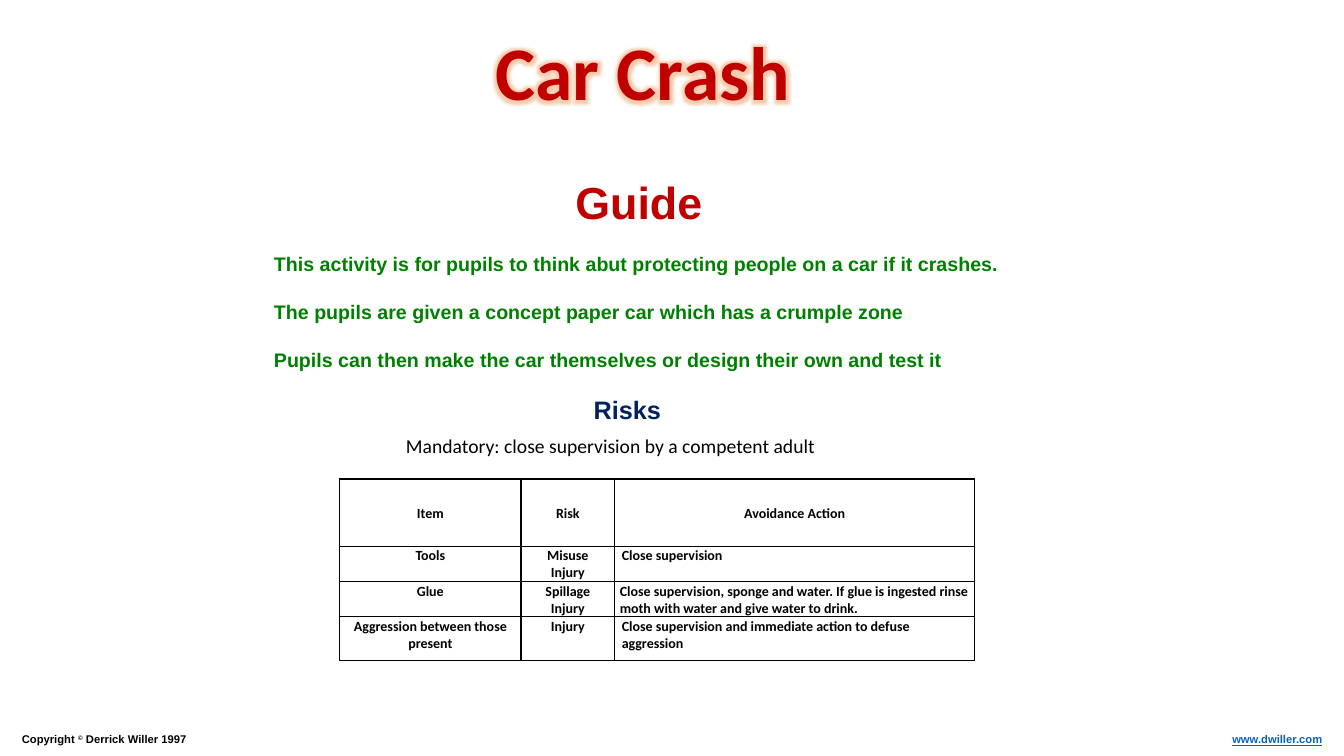
import pptx
import pptx.util
import pptx.dml.color
import pptx.enum.text
import pptx.oxml
import lxml.etree

Cm, Pt = pptx.util.Cm, pptx.util.Pt
Rgb = pptx.dml.color.RGBColor.from_string
Align, Anchor = pptx.enum.text.PP_ALIGN, pptx.enum.text.MSO_ANCHOR
Size = pptx.enum.text.MSO_AUTO_SIZE
NS = "http://schemas.openxmlformats.org/drawingml/2006/main"

THEME = {
    "title": ("C00000", {"size": Pt(54), "name": "Calibri", "bold": True}),
    "guide": ("C00000", {"size": Pt(32), "name": "Arial", "bold": True}),
    "body": ("008000", {"size": Pt(14), "name": "Arial", "bold": True}),
    "risks": ("002060", {"size": Pt(18), "name": "Arial", "bold": True}),
    "rule": ("000000", {"size": Pt(14), "name": "Calibri", "bold": False}),
    "cell": ("000000", {"size": Pt(10), "name": "Calibri", "bold": True}),
    "foot": ("000000", {"size": Pt(8), "name": "Arial", "bold": True}),
    "link": ("0563C1", {"size": Pt(8), "name": "Arial", "bold": True, "underline": True}),
    "edge": "002060",
    "glow": "ED7D31",
    "grid": "000000",
}


def fill(frame, text, style, align=Align.LEFT):
    """Put text in a frame, one paragraph a line, in a theme style."""
    frame.text = text
    color, font = THEME[style]
    for para in frame.paragraphs:
        para.alignment = align
        for run in para.runs:
            for key, value in font.items():
                setattr(run.font, key, value)
            run.font.color.rgb = Rgb(color)


def place(shape, box, wrap):
    for key, value in zip(("left", "top", "width", "height"), box):
        setattr(shape, key, Cm(value))
    frame = shape.text_frame
    form = {"word_wrap": wrap, "auto_size": Size.NONE, "vertical_anchor": Anchor.TOP}
    for key, value in form.items():
        setattr(frame, key, value)
    return frame


deck = pptx.Presentation()
deck.slide_width, deck.slide_height = Cm(33.87), Cm(19.05)
slide = deck.slides.add_slide(deck.slide_layouts[1])
title, body = slide.placeholders

# Title with outline and glow
frame = place(title, (12.19, 0.51, 8.03, 2.57), False)
fill(frame, "Car Crash", "title", Align.CENTER)
props = frame.paragraphs[0].runs[0].font._element
props.insert(0, pptx.oxml.parse_xml(
    f'<a:ln xmlns:a="{NS}" w="9525"><a:solidFill><a:srgbClr val="{THEME["edge"]}"/>'
    '</a:solidFill></a:ln>'))
props.insert(2, pptx.oxml.parse_xml(
    f'<a:effectLst xmlns:a="{NS}"><a:glow rad="101600"><a:srgbClr val="{THEME["glow"]}">'
    '<a:alpha val="40000"/></a:srgbClr></a:glow></a:effectLst>'))

# Guide text
frame = place(body, (6.65, 6.22, 22.63, 3.25), True)
fill(frame, "This activity is for pupils to think abut protecting people on a car if it crashes.\n"
     "The pupils are given a concept paper car which has a crumple zone\n"
     "Pupils can then make the car themselves or design their own and test it", "body")
for para in frame.paragraphs:
    para.space_before, para.space_after = Pt(0), Pt(17.5)
    props = para._p.get_or_add_pPr()
    props.set("marL", "0")
    props.set("indent", "0")
    lxml.etree.SubElement(props, f"{{{NS}}}buNone")

# Headings and footer
notes = [
    ("Guide", "guide", (14.25, 4.29, 3.73, 1.63), False, Align.LEFT),
    ("Risks", "risks", (14.71, 9.8, 2.24, 1.02), False, Align.LEFT),
    ("Mandatory: close supervision by a competent adult", "rule",
     (9.98, 10.82, 11.71, 0.86), True, Align.LEFT),
    ("Copyright ", "foot", (0.3, 18.34, 14.35, 0.61), True, Align.LEFT),
    ("www.dwiller.com", "link", (30.18, 18.34, 3.4, 0.61), True, Align.RIGHT),
]
for text, style, box, wrap, align in notes:
    shape = slide.shapes.add_textbox(0, 0, 0, 0)
    frame = place(shape, box, wrap)
    fill(frame, text, style, align)
    if style == "foot":
        color, font = THEME[style]
        for part, lift in (("©", "30000"), (" Derrick Willer 1997", "0")):
            run = frame.paragraphs[0].add_run()
            run.text = part
            for key, value in font.items():
                setattr(run.font, key, value)
            run.font.color.rgb = Rgb(color)
            run.font._element.set("baseline", lift)

# Risk table
rows = [
    ("Item", "Risk", "Avoidance Action"),
    ("Tools", "Misuse\nInjury", "Close supervision"),
    ("Glue", "Spillage\nInjury", "Close supervision, sponge and water. "
     "If glue is ingested rinse moth with water and give water to drink."),
    ("Aggression between those present", "Injury",
     "Close supervision and immediate action to defuse aggression"),
]
widths, heights = (4.57, 2.36, 9.07), (1.7, 0.87, 0.87, 1.1)
table = slide.shapes.add_table(4, 3, Cm(8.56), Cm(12.07), Cm(sum(widths)), Cm(sum(heights))).table
for col, width in zip(table.columns, widths):
    col.width = Cm(width)
for i, (row, height) in enumerate(zip(rows, heights)):
    table.rows[i].height = Cm(height)
    side = Cm(0.13 if i == 2 else 0.18)
    for j, text in enumerate(row):
        cell = table.cell(i, j)
        fill(cell.text_frame, text, "cell", Align.LEFT if i and j == 2 else Align.CENTER)
        form = {"margin_left": side, "margin_right": side, "margin_top": Cm(0.03),
                "margin_bottom": 0, "vertical_anchor": Anchor.TOP if i else Anchor.MIDDLE}
        for key, value in form.items():
            setattr(cell, key, value)
        cell.fill.background()
        props = cell._tc.get_or_add_tcPr()
        for k, edge in enumerate(("lnL", "lnR", "lnT", "lnB")):
            props.insert(k, pptx.oxml.parse_xml(
                f'<a:{edge} xmlns:a="{NS}" w="12700"><a:solidFill>'
                f'<a:srgbClr val="{THEME["grid"]}"/></a:solidFill></a:{edge}>'))

deck.save("out.pptx")
